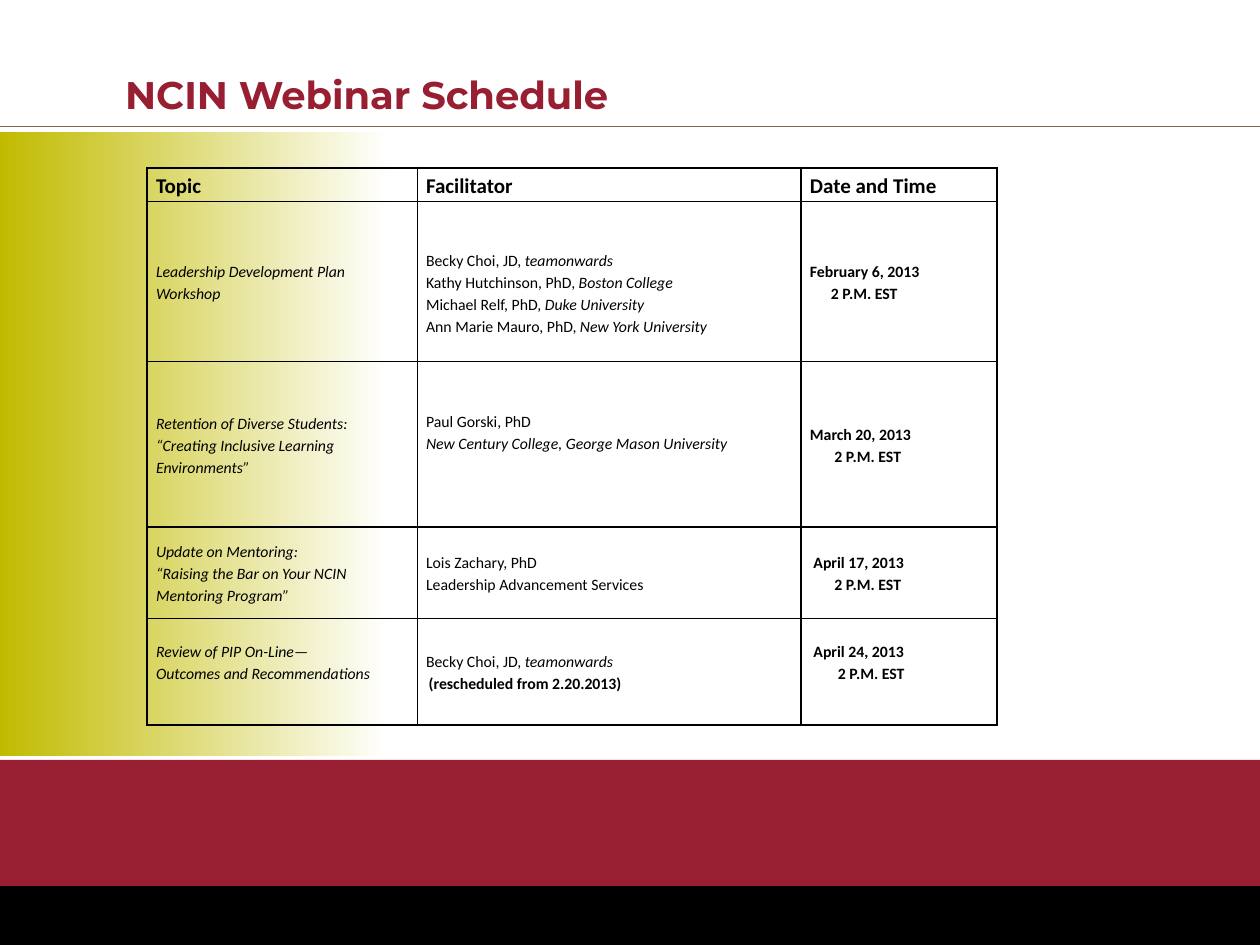
import pptx
import pptx.util
import pptx.dml.color
import pptx.enum.shapes
import pptx.enum.text
import pptx.oxml
import pptx.oxml.ns

Pt = pptx.util.Pt
HUES = {"gold": "C1BB00", "white": "FFFFFF", "red": "981E32",
        "black": "000000", "tan": "7C6A55"}
COLS = [154.3, 219.4, 111.8]
ROWS = [19.2, 91.4, 94.6, 52.4, 60.6]
HEADS = ["Topic", "Facilitator", "Date and Time"]
TOPICS = [
    ["Leadership Development Plan Workshop"],
    ["Retention of Diverse Students:", "“Creating Inclusive Learning Environments”"],
    ["Update on Mentoring:", "“Raising the Bar on Your NCIN Mentoring Program”"],
    ["Review of PIP On-Line—", "Outcomes and Recommendations"],
]
HOSTS = [
    [("Becky Choi, JD, ", "teamonwards"),
     ("Kathy Hutchinson, PhD, ", "Boston College"),
     ("Michael Relf, PhD, ", "Duke University"),
     ("Ann Marie Mauro, PhD, ", "New York University")],
    [("Paul Gorski, PhD", ""),
     ("", "New Century College, George Mason University")],
    [("Lois Zachary, PhD", ""), ("Leadership Advancement Services", "")],
    [("Becky Choi, JD, ", "teamonwards")],
]
NOTE = "(rescheduled from 2.20.2013)"
DATES = [("February 6, 2013", 0, 12), ("March 20, 2013", 0, 14),
         ("April 17, 2013", 2, 14), ("April 24, 2013", 2, 16)]
HOUR = "2 P.M. EST"
PADS = {(1, 1): (12.6, 0), (2, 1): (0, 14), (4, 0): (0, 12), (4, 2): (0, 12)}


def tint(name):
    return pptx.dml.color.RGBColor.from_string(HUES[name])


def add_band(slide, left, top, width, height, hue, fade=None):
    band = slide.shapes.add_shape(pptx.enum.shapes.MSO_SHAPE.RECTANGLE,
                                  Pt(left), Pt(top), Pt(width), Pt(height))
    band.shadow.inherit = False
    band.line.fill.background()
    if fade:
        band.fill.gradient()
        band.fill.gradient_angle = 0
        for stop, name in zip(band.fill.gradient_stops, (hue, fade)):
            stop.color.rgb = tint(name)
    else:
        band.fill.solid()
        band.fill.fore_color.rgb = tint(hue)


def add_frame(slide, left, top, width, height):
    add_band(slide, left, top + 75.6, 221.8, 356.4, "gold", "white")
    add_band(slide, left, top + 434.2, width, 72.4, "red")
    add_band(slide, left, top + 506.4, width, height - 506.4, "black")
    rule = slide.shapes.add_connector(
        pptx.enum.shapes.MSO_CONNECTOR.STRAIGHT,
        Pt(left), Pt(top + 72.4), Pt(left + width), Pt(top + 72.4))
    rule.line.color.rgb = tint("tan")
    rule.line.width = Pt(0.5)
    props = rule._element.spPr
    props.append(pptx.oxml.parse_xml(
        f'<a:effectLst {pptx.oxml.ns.nsdecls("a")}/>'))


def style_font(font, face, size, hue, bold=False, slant=False):
    font.name, font.size = face, Pt(size)
    font.bold, font.italic = bold, slant
    font.color.rgb = tint(hue)


def add_title(slide, left, top, width, height):
    box = slide.shapes.add_textbox(Pt(left), Pt(top), Pt(width), Pt(height))
    frame = box.text_frame
    frame.word_wrap = True
    frame.vertical_anchor = pptx.enum.text.MSO_ANCHOR.BOTTOM
    frame.text = "NCIN Webinar Schedule"
    para = frame.paragraphs[0]
    para.line_spacing = 0.8
    style_font(para.runs[0].font, "Montserrat", 22, "red", True)


def draw_edges(cell, row, col):
    props = cell._tc.get_or_add_tcPr()
    outer = {"L": col == 0, "R": col == len(COLS) - 1,
             "T": row == 0, "B": row == len(ROWS) - 1}
    for spot, (side, thick) in enumerate(outer.items()):
        props.insert(spot, pptx.oxml.parse_xml(
            f'<a:ln{side} {pptx.oxml.ns.nsdecls("a")} '
            f'w="{Pt(1.5 if thick else 1)}"><a:solidFill>'
            f'<a:srgbClr val="{HUES["black"]}"/></a:solidFill></a:ln{side}>'))


def fill_cell(cell, lines, size=9):
    frame = cell.text_frame
    for spot, (parts, indent) in enumerate(lines):
        para = frame.add_paragraph() if spot else frame.paragraphs[0]
        para._p.get_or_add_pPr().set("marL", str(Pt(indent)))
        para.line_spacing = 1.15
        for text, bold, slant in parts:
            run = para.add_run()
            run.text = text
            style_font(run.font, "Calibri", size, "black", bold, slant)


def make_rows():
    yield [[([(head, True, False)], 0)] for head in HEADS]
    for spot, (topic, hosts, (day, near, far)) in enumerate(
            zip(TOPICS, HOSTS, DATES)):
        left = [([(text, False, True)], 0) for text in topic]
        mid = [([(text, False, slant) for text, slant
                 in ((name, False), (place, True)) if text], 0)
               for name, place in hosts]
        if spot == len(TOPICS) - 1:
            mid.append(([(NOTE, True, False)], 1.5))
        right = [([(day, True, False)], near), ([(HOUR, True, False)], far)]
        yield [left, mid, right]


def add_plan(slide, left, top, width, height):
    table = slide.shapes.add_table(len(ROWS), len(COLS), Pt(left), Pt(top),
                                   Pt(width), Pt(height)).table
    table.first_row = table.horz_banding = False
    for col, size in zip(table.columns, COLS):
        col.width = Pt(size)
    for row, size in zip(table.rows, ROWS):
        row.height = Pt(size)
    for row, cells in enumerate(make_rows()):
        for col, lines in enumerate(cells):
            cell = table.cell(row, col)
            above, below = PADS.get((row, col), (0, 0))
            cell.margin_left = cell.margin_right = Pt(5)
            cell.margin_top, cell.margin_bottom = Pt(above), Pt(below)
            cell.vertical_anchor = pptx.enum.text.MSO_ANCHOR.MIDDLE
            cell.fill.background()
            draw_edges(cell, row, col)
            fill_cell(cell, lines, 9 if row else 12)


def main():
    deck = pptx.Presentation()
    deck.slide_width, deck.slide_height = Pt(720), Pt(540)
    slide = deck.slides.add_slide(deck.slide_layouts[6])
    add_frame(slide, 0, 0, 720, 540)
    add_title(slide, 64.4, 17.4, 463.6, 53.2)
    add_plan(slide, 84.2, 96, sum(COLS), sum(ROWS))
    deck.save("out.pptx")


if __name__ == "__main__":
    main()
